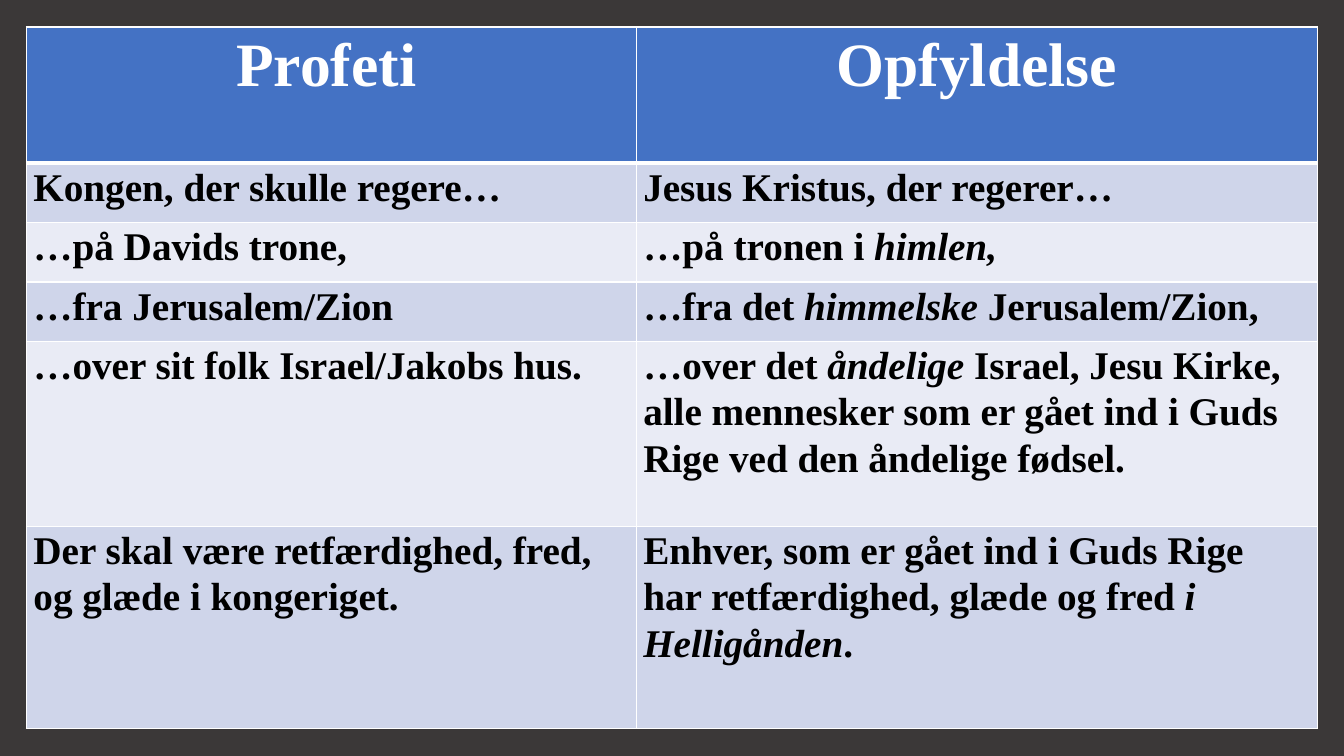
"""Build a slide that sets prophecy beside fulfilment in a two-column table."""
from lxml.etree import SubElement
from pptx import Presentation
from pptx.dml.color import RGBColor
from pptx.enum.text import PP_ALIGN
from pptx.oxml.ns import qn
from pptx.util import Pt

HEAD = ("Profeti* ", "Opfyldelse")
BODY = [
    ("Kongen, der skulle regere…", "Jesus Kristus, der regerer…"),
    ("…på Davids trone,", "…på tronen i *himlen,*"),
    ("…fra Jerusalem/Zion", "…fra det *himmelske* Jerusalem/Zion,"),
    ("…over sit folk Israel/Jakobs hus.",
     "…over det *åndelige* Israel, Jesu Kirke, alle mennesker som er gået "
     "ind i Guds Rige ved den åndelige fødsel."),
    ("Der skal være retfærdighed, fred, og glæde i kongeriget.",
     "Enhver, som er gået ind i Guds Rige har retfærdighed, glæde og fred "
     "*i Helligånden*."),
]
THEME = {
    "font": "Times New Roman", "title": Pt(44), "text": Pt(28),
    "back": "3B3838", "head": "4472C4", "bands": ("E9EBF5", "CFD5EA"),
    "light": "FFFFFF", "dark": "000000",
}
LEFT, TOP = Pt(18.9), Pt(19.3)
WIDTHS = [Pt(435.6), Pt(486.7)]
HEIGHTS = [Pt(97.2)] + [Pt(42.5)] * 3 + [Pt(132.2), Pt(144.2)]


def color(name):
    return RGBColor.from_string(name)


def border(cell, side, width):
    line = SubElement(cell._tc.get_or_add_tcPr(), qn("a:ln" + side), w=str(width))
    fill = SubElement(line, qn("a:solidFill"))
    SubElement(fill, qn("a:srgbClr"), val=THEME["light"])


def write(cell, text, head):
    para = cell.text_frame.paragraphs[0]
    para.line_spacing, para.space_after = 1.07, Pt(8)
    para.alignment = PP_ALIGN.CENTER if head else PP_ALIGN.LEFT
    for i, part in enumerate(text.split("*")):
        if not part:
            continue
        run = para.add_run()
        run.text = part
        font = run.font
        font.name, font.bold = THEME["font"], True
        font.size = THEME["title"] if head and i == 0 else THEME["text"]
        font.italic = not head and i % 2 == 1
        font.color.rgb = color(THEME["light" if head else "dark"])


def build(slide):
    rows = [HEAD] + BODY
    table = slide.shapes.add_table(
        len(rows), len(HEAD), LEFT, TOP, sum(WIDTHS), sum(HEIGHTS)).table
    for col, width in zip(table.columns, WIDTHS):
        col.width = width
    for r, (texts, height) in enumerate(zip(rows, HEIGHTS)):
        table.rows[r].height = height
        for c, text in enumerate(texts):
            cell = table.cell(r, c)
            cell.margin_left = cell.margin_right = Pt(5)
            cell.margin_top = cell.margin_bottom = 0
            for side in "LRTB":
                thick = (r, side) in ((0, "B"), (1, "T"))
                border(cell, side, Pt(3 if thick else 1))
            cell.fill.solid()
            cell.fill.fore_color.rgb = color(
                THEME["bands"][r % 2] if r else THEME["head"])
            write(cell, text, r == 0)


def main():
    deck = Presentation()
    deck.slide_width, deck.slide_height = Pt(960), Pt(540)
    slide = deck.slides.add_slide(deck.slide_layouts[6])
    slide.background.fill.solid()
    slide.background.fill.fore_color.rgb = color(THEME["back"])
    build(slide)
    deck.save("out.pptx")


if __name__ == "__main__":
    main()
